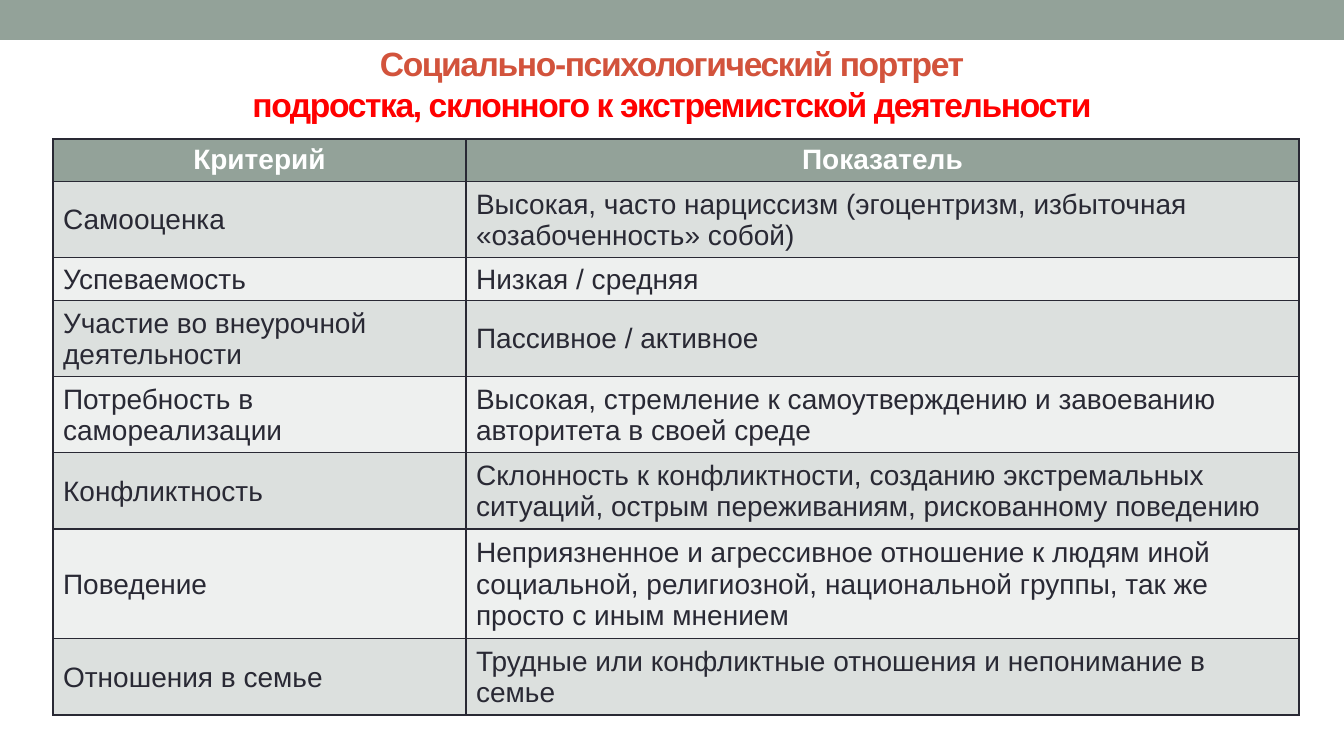
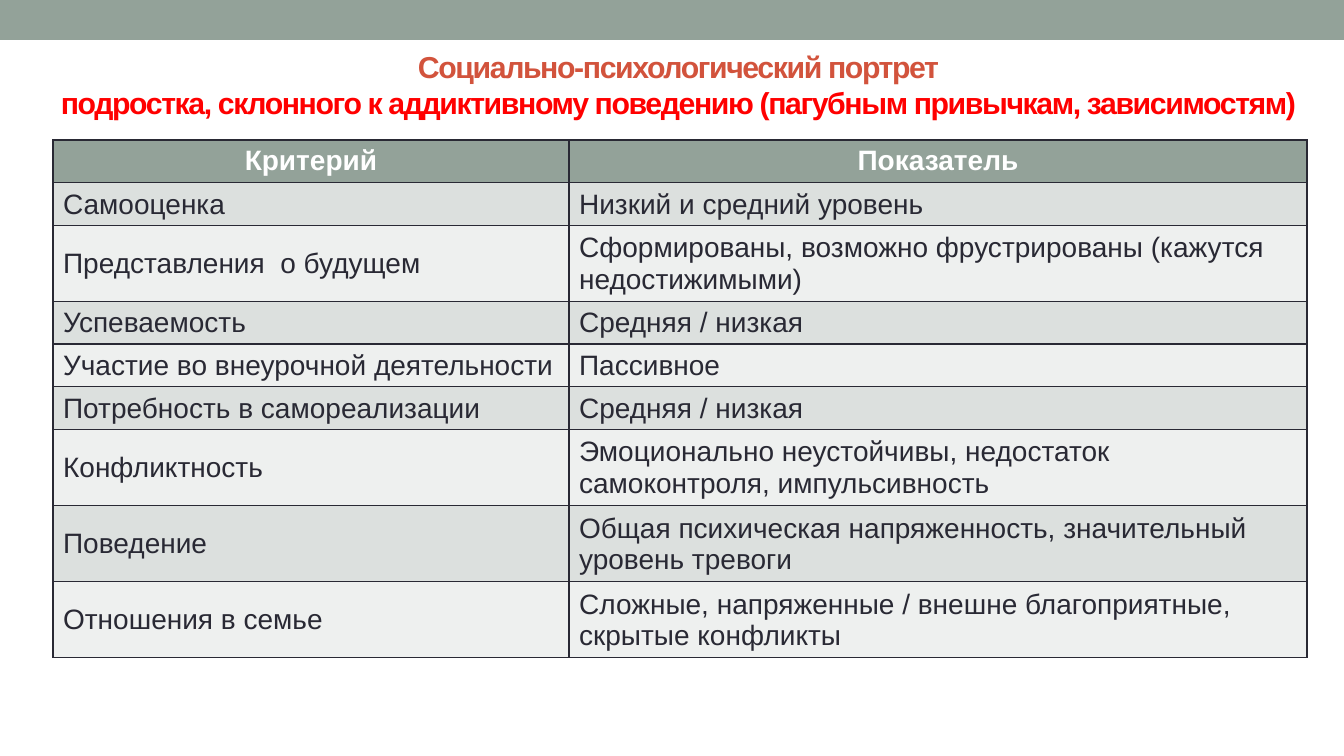
from dataclasses import dataclass

from lxml import etree
from pptx import Presentation
from pptx.dml.color import RGBColor
from pptx.enum.shapes import MSO_SHAPE
from pptx.enum.text import MSO_ANCHOR, PP_ALIGN
from pptx.oxml.ns import qn
from pptx.util import Emu, Pt

RECTANGLE = MSO_SHAPE.RECTANGLE
MIDDLE, TOP = MSO_ANCHOR.MIDDLE, MSO_ANCHOR.TOP
CENTER, LEFT = PP_ALIGN.CENTER, PP_ALIGN.LEFT
EMU_PER_PX = 914400 / 100.8


@dataclass(frozen=True)
class Theme:
    font: str = "Arial"
    sage: str = "93A299"
    title: str = "D2533C"
    accent: str = "FF0000"
    ink: str = "292934"
    white: str = "FFFFFF"
    stripes: tuple = ("DCE0DE", "EEF0EF")
    table_size: float = 20
    title_tracking: int = -100
    border: int = 12700


THEME = Theme()
WIDTH, HEIGHT, BAND_HEIGHT = 1344, 756, 40
TABLE_LEFT = 53
CELL_MARGIN_TOP, CELL_MARGIN_BOTTOM = 5, 4
ROW_HEIGHTS = {1: 41, 2: 73, 3: 104}  # by number of text lines
TITLE_START = "Социально-психологический портрет"
HEADER = (1, "Критерий", "Показатель")

# Each row: number of text lines, criterion, indicator
PORTRAITS = [
    {
        "title": "подростка, склонного к экстремистской деятельности",
        "title_size": 24,
        "title_box": (67, 29, 1210, 109),
        "table_top": 139,
        "columns": (413, 833),
        "rows": [
            (2, "Самооценка", "Высокая, часто нарциссизм (эгоцентризм, избыточная «озабоченность» собой)"),
            (1, "Успеваемость", "Низкая / средняя"),
            (2, "Участие во внеурочной деятельности", "Пассивное / активное"),
            (2, "Потребность в самореализации",
             "Высокая, стремление к самоутверждению и завоеванию авторитета в своей среде"),
            (2, "Конфликтность",
             "Склонность к конфликтности, созданию экстремальных ситуаций, "
             "острым переживаниям, рискованному поведению"),
            (3, "Поведение",
             "Неприязненное и агрессивное отношение к людям иной социальной, "
             "религиозной, национальной группы, так же просто с иным мнением"),
            (2, "Отношения в семье", "Трудные или конфликтные отношения и непонимание в семье"),
        ],
    },
    {
        "title": "подростка, склонного к аддиктивному поведению (пагубным привычкам, зависимостям)",
        "title_size": 21.6,
        "title_box": (13, 30, 1331, 109),
        "table_top": 140,
        "columns": (516, 738),
        "rows": [
            (1, "Самооценка", "Низкий и средний уровень"),
            (2, "Представления  о будущем",
             "Сформированы, возможно фрустрированы (кажутся недостижимыми)"),
            (1, "Успеваемость", "Средняя / низкая"),
            (1, "Участие во внеурочной деятельности", "Пассивное"),
            (1, "Потребность в самореализации", "Средняя / низкая"),
            (2, "Конфликтность", "Эмоционально неустойчивы, недостаток самоконтроля, импульсивность"),
            (2, "Поведение", "Общая психическая напряженность, значительный уровень тревоги"),
            (2, "Отношения в семье", "Сложные, напряженные / внешне благоприятные, скрытые конфликты"),
        ],
    },
]


def px(*lengths):
    return [Emu(round(length * EMU_PER_PX)) for length in lengths]


def add_run(paragraph, text, size, color, bold):
    run = paragraph.add_run()
    run.text = text
    run.font.name = THEME.font
    run.font.size = Pt(size)
    run.font.bold = bold
    run.font.color.rgb = RGBColor.from_string(color)
    return run


presentation = Presentation()
presentation.slide_width, presentation.slide_height = px(WIDTH, HEIGHT)
blank_layout = presentation.slide_layouts[6]

for portrait in PORTRAITS:
    slide = presentation.slides.add_slide(blank_layout)

    # Top band
    band = slide.shapes.add_shape(RECTANGLE, *px(0, 0, WIDTH, BAND_HEIGHT))
    band.shadow.inherit = False
    band.fill.solid()
    band.fill.fore_color.rgb = RGBColor.from_string(THEME.sage)
    band.line.fill.background()

    # Two-line title
    title_frame = slide.shapes.add_textbox(*px(*portrait["title_box"])).text_frame
    title_frame.word_wrap = True
    title_frame.vertical_anchor = MIDDLE
    paragraph = title_frame.paragraphs[0]
    paragraph.alignment = CENTER
    size = portrait["title_size"]
    first_run = add_run(paragraph, TITLE_START, size, THEME.title, True)
    paragraph.add_line_break()
    second_run = add_run(paragraph, portrait["title"], size, THEME.accent, True)
    for run in (first_run, second_run):
        run._r.get_or_add_rPr().set("spc", str(THEME.title_tracking))

    # Table of criteria
    rows = [HEADER, *portrait["rows"]]
    columns = portrait["columns"]
    heights = [ROW_HEIGHTS[line_count] for line_count, *texts in rows]
    table = slide.shapes.add_table(
        len(rows), len(columns),
        *px(TABLE_LEFT, portrait["table_top"], sum(columns), sum(heights)),
    ).table
    for column, width in zip(table.columns, px(*columns)):
        column.width = width
    for row, height in zip(table.rows, px(*heights)):
        row.height = height

    for row_index, (line_count, *texts) in enumerate(rows):
        is_header = row_index == 0
        fill = THEME.sage if is_header else THEME.stripes[(row_index - 1) % 2]
        color = THEME.white if is_header else THEME.ink
        for column_index, text in enumerate(texts):
            cell = table.cell(row_index, column_index)
            cell.vertical_anchor = TOP if is_header else MIDDLE
            cell.margin_top, cell.margin_bottom = px(CELL_MARGIN_TOP, CELL_MARGIN_BOTTOM)

            # Borders come before the fill in the cell properties
            properties = cell._tc.get_or_add_tcPr()
            for side in ("a:lnL", "a:lnR", "a:lnT", "a:lnB"):
                line = etree.SubElement(properties, qn(side), w=str(THEME.border))
                line_fill = etree.SubElement(line, qn("a:solidFill"))
                etree.SubElement(line_fill, qn("a:srgbClr"), val=THEME.ink)
            cell.fill.solid()
            cell.fill.fore_color.rgb = RGBColor.from_string(fill)

            paragraph = cell.text_frame.paragraphs[0]
            paragraph.alignment = CENTER if is_header else LEFT
            add_run(paragraph, text, THEME.table_size, color, is_header)

presentation.save("out.pptx")
